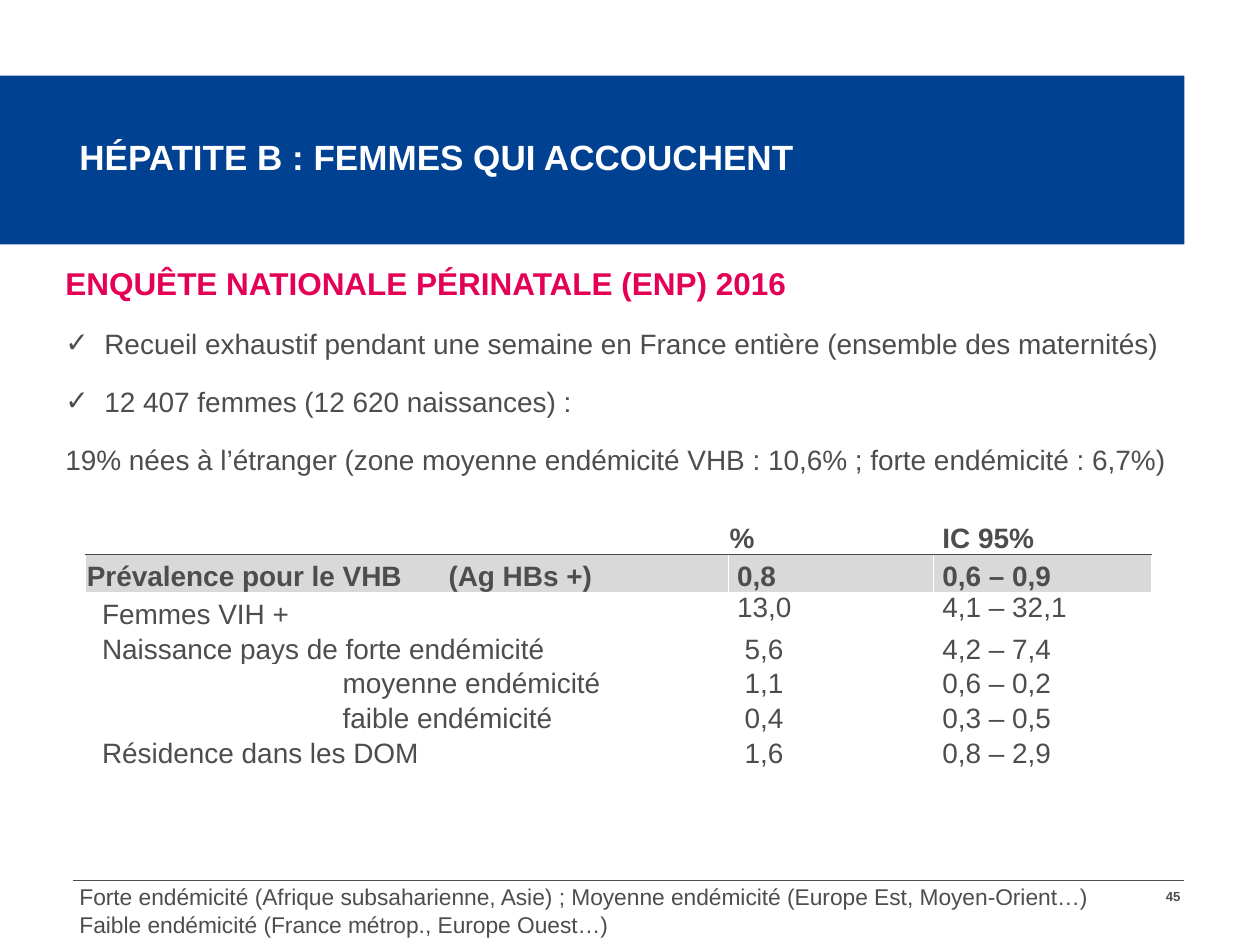
from dataclasses import dataclass

from lxml import etree
from pptx import Presentation
from pptx.dml.color import RGBColor
from pptx.enum.shapes import MSO_CONNECTOR, MSO_SHAPE
from pptx.enum.text import MSO_ANCHOR, PP_ALIGN
from pptx.oxml.ns import qn
from pptx.util import Inches, Pt

RECT, LINE = MSO_SHAPE.RECTANGLE, MSO_CONNECTOR.STRAIGHT
TOP, MID, LOW = MSO_ANCHOR.TOP, MSO_ANCHOR.MIDDLE, MSO_ANCHOR.BOTTOM
LEFT, RIGHT = PP_ALIGN.LEFT, PP_ALIGN.RIGHT


@dataclass(frozen=True)
class Theme:
    font: str = "Arial"
    blue: str = "004192"
    pink: str = "E30056"
    ink: str = "4D4D4F"
    band: str = "D9D9D9"
    white: str = "FFFFFF"
    title: float = 20
    head: float = 18
    body: float = 16
    note: float = 13
    page: float = 7.5


T = Theme()

# Each row: label, its indent, percentage, interval, indent of the figures
HEAD = ("", 0, "%", "IC 95%", (0.01, 0.07))
ROWS = [
    HEAD,
    ("Prévalence pour le VHB\t(Ag HBs +)", 0.01, "0,8", "0,6 – 0,9", (0.07, 0.07)),
    ("Femmes VIH +", 0.13, "13,0", "4,1 – 32,1", (0.07, 0.07)),
    ("Naissance pays de forte endémicité", 0.13, "5,6", "4,2 – 7,4", (0.13, 0.07)),
    ("moyenne endémicité", 2.04, "1,1", "0,6 – 0,2", (0.13, 0.07)),
    ("faible endémicité", 2.04, "0,4", "0,3 – 0,5", (0.13, 0.07)),
    ("Résidence dans les DOM", 0.13, "1,6", "0,8 – 2,9", (0.13, 0.07)),
]


def rgb(code):
    return RGBColor.from_string(code)


def write(para, text, size, color, bold=False):
    run = para.add_run()
    run.text = text
    font = run.font
    font.name, font.size, font.bold = T.font, Pt(size), bold
    font.color.rgb = rgb(color)


def pad(item, left, top, right, low):
    item.margin_left, item.margin_top = Inches(left), Inches(top)
    item.margin_right, item.margin_bottom = Inches(right), Inches(low)


def add_rect(slide, box, color):
    shape = slide.shapes.add_shape(RECT, *map(Inches, box))
    shape.shadow.inherit = False
    shape.fill.solid()
    shape.fill.fore_color.rgb = rgb(color)
    shape.line.fill.background()
    return shape


def add_text(slide, box, wrap=True, anchor=TOP):
    frame = slide.shapes.add_textbox(*map(Inches, box)).text_frame
    frame.word_wrap, frame.vertical_anchor = wrap, anchor
    return frame


def add_check(para):
    props = para._p.get_or_add_pPr()
    props.set("marL", str(Inches(0.31)))
    props.set("indent", str(Inches(-0.31)))
    etree.SubElement(props, qn("a:buFont"), typeface=T.font)
    etree.SubElement(props, qn("a:buChar"), char="✓")


def add_tab(para, pos):
    tabs = etree.SubElement(para._p.get_or_add_pPr(), qn("a:tabLst"))
    etree.SubElement(tabs, qn("a:tab"), pos=str(Inches(pos)), algn="l")


def set_edges(cell, top, low):
    props = cell._tc.get_or_add_tcPr()
    edges = (("L", T.white), ("R", T.white), ("T", top), ("B", low))
    for spot, (side, color) in enumerate(edges):
        edge = etree.Element(qn(f"a:ln{side}"), w=str(Pt(1)))
        fill = etree.SubElement(edge, qn("a:solidFill"))
        etree.SubElement(fill, qn("a:srgbClr"), val=color)
        props.insert(spot, edge)


def title_band(slide, left, top, width, height):
    add_rect(slide, (left, top, width, height), T.blue)
    frame = add_text(slide, (left + 0.59, top + 0.02, 7.17, 1.25), anchor=MID)
    pad(frame, 0.04, 0, 0.04, 0)
    write(frame.paragraphs[0], "HÉPATITE B : FEMMES QUI ACCOUCHENT",
          T.title, T.white, True)


def survey(slide, *box):
    frame = add_text(slide, box)
    first = frame.paragraphs[0]
    first.line_spacing = 1.1
    write(first, "ENQUÊTE NATIONALE PÉRINATALE (ENP) 2016", T.head, T.pink, True)
    items = (
        ("Recueil exhaustif pendant une semaine en France entière "
         "(ensemble des maternités)", True),
        ("12 407 femmes (12 620 naissances) :", True),
        ("19% nées à l’étranger (zone moyenne endémicité VHB : 10,6% ; "
         "forte endémicité : 6,7%)", False),
    )
    for text, check in items:
        para = frame.add_paragraph()
        para.line_spacing, para.space_before = 1.1, Pt(12)
        if check:
            add_check(para)
        write(para, text, T.body, T.ink)


def rates(slide, *box):
    frame = slide.shapes.add_table(len(ROWS), 3, *map(Inches, box))
    table = frame.table
    table.horz_banding = table.first_row = False
    for col, width in zip(table.columns, (5.1, 1.63, 1.73)):
        col.width = Inches(width)
    for r, (label, inset, rate, span, insets) in enumerate(ROWS):
        table.rows[r].height = Inches(0.3 if r < 3 else 0.27)
        texts = zip((label, rate, span), (inset, *insets))
        for c, (text, left) in enumerate(texts):
            cell = table.cell(r, c)
            raised = r == 2 and c > 0
            cell.vertical_anchor = TOP if raised else LOW
            pad(cell, left, 0 if raised else 0.01, 0.01, 0)
            cell.fill.solid()
            cell.fill.fore_color.rgb = rgb(T.band if r == 1 else T.white)
            set_edges(cell, T.ink if r == 1 else T.white,
                      T.ink if r == 0 else T.white)
            para = cell.text_frame.paragraphs[0]
            if "\t" in text:
                add_tab(para, 2.87)
            if text:
                write(para, text, T.body, T.ink, r < 2)


def footer(slide, left, top, width, height):
    # Rule above the notes
    rule = slide.shapes.add_connector(
        LINE, *map(Inches, (left, top, left + width, top)))
    rule.line.color.rgb, rule.line.width = rgb(T.ink), Pt(0.75)
    etree.SubElement(rule._element.spPr, qn("a:effectLst"))

    # Page number
    page = add_text(slide, (left + width - 0.26, top + 0.06, 0.27, 0.13), False)
    pad(page, 0.04, 0, 0.04, 0)
    page.paragraphs[0].alignment = RIGHT
    write(page.paragraphs[0], "45", T.page, T.ink, True)

    # Notes on the zones
    note = add_rect(slide, (left + 0.01, top + 0.02, 8.35, height - 0.02), T.white)
    frame = note.text_frame
    frame.word_wrap, frame.vertical_anchor = True, TOP
    pad(frame, 0.04, 0, 0.04, 0)
    lines = (
        "Forte endémicité (Afrique subsaharienne, Asie) ; "
        "Moyenne endémicité (Europe Est, Moyen-Orient…)",
        "Faible endémicité (France métrop., Europe Ouest…)",
    )
    for i, text in enumerate(lines):
        para = frame.add_paragraph() if i else frame.paragraphs[0]
        para.alignment = LEFT
        write(para, text, T.note, T.ink)


def main():
    deck = Presentation()
    deck.slide_width, deck.slide_height = Inches(10), Inches(7.5)
    slide = deck.slides.add_slide(deck.slide_layouts[6])
    title_band(slide, 0, 0.6, 9.4, 1.34)
    survey(slide, 0.42, 2.02, 8.99, 1.83)
    rates(slide, 0.68, 4.09, 8.46, 2.02)
    footer(slide, 0.58, 6.99, 8.82, 0.46)
    deck.save("out.pptx")


if __name__ == "__main__":
    main()
